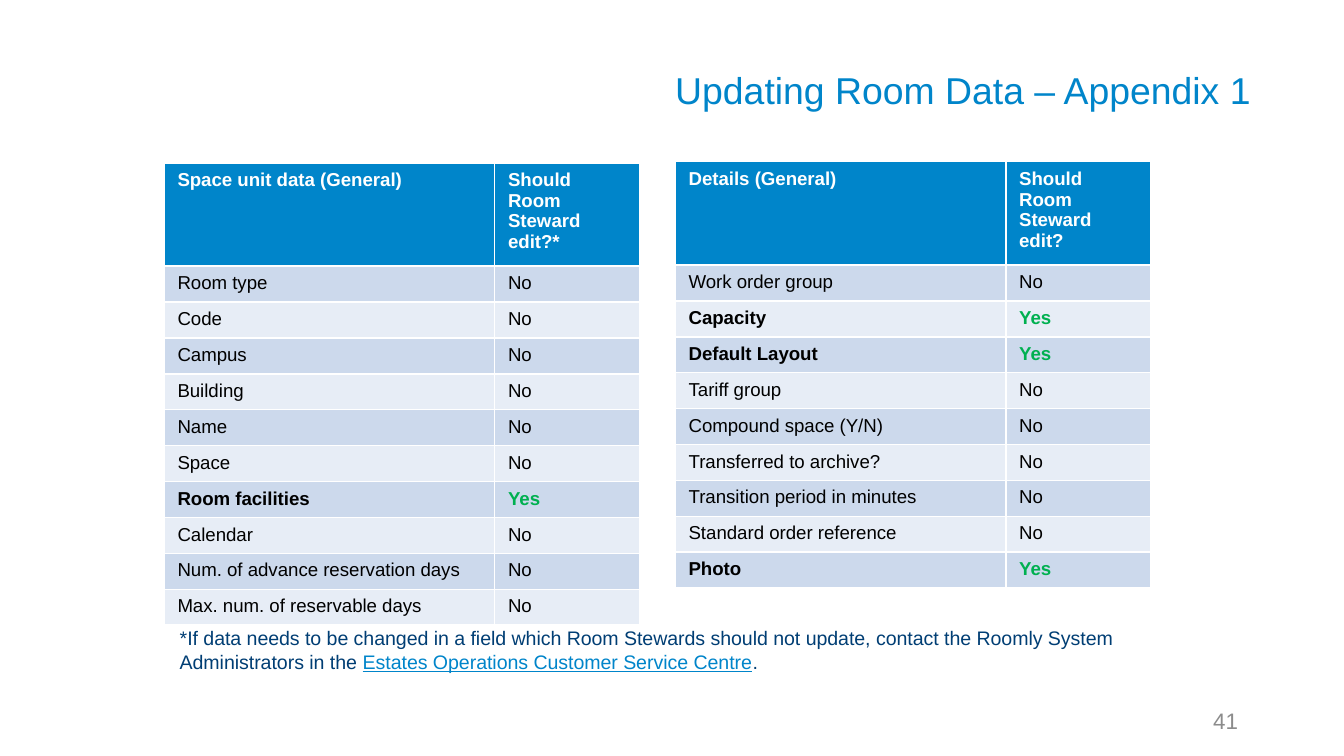
from pptx import Presentation
from pptx.dml.color import RGBColor
from pptx.enum.text import MSO_ANCHOR, PP_ALIGN
from pptx.util import Pt

TITLE = "Updating Room Data – Appendix 1"
PAGE = "41"
SPACE_UNIT = [
    ("Space unit data (General)", "Should Room Steward edit?*"),
    ("Room type", "No"),
    ("Code", "No"),
    ("Campus", "No"),
    ("Building", "No"),
    ("Name", "No"),
    ("Space", "No"),
    ("Room facilities", "Yes"),
    ("Calendar", "No"),
    ("Num. of advance reservation days", "No"),
    ("Max. num. of reservable days", "No"),
]
DETAILS = [
    ("Details (General)", "Should Room Steward edit?"),
    ("Work order group", "No"),
    ("Capacity", "Yes"),
    ("Default Layout", "Yes"),
    ("Tariff group", "No"),
    ("Compound space (Y/N)", "No"),
    ("Transferred to archive?", "No"),
    ("Transition period in minutes", "No"),
    ("Standard order reference", "No"),
    ("Photo", "Yes"),
]
NOTE = [
    ("*If data needs to be changed in a field which Room Stewards should not update, "
     "contact the Roomly System Administrators in the ", "navy", False),
    ("Estates Operations Customer Service Centre", "blue", True),
    (".", "navy", False),
]

THEME = {
    "font": "Arial",
    "blue": RGBColor(0x00, 0x85, 0xCA),
    "navy": RGBColor(0x00, 0x3E, 0x74),
    "grey": RGBColor(0x8C, 0x8C, 0x8C),
    "green": RGBColor(0x00, 0xB0, 0x50),
    "black": RGBColor(0x00, 0x00, 0x00),
    "white": RGBColor(0xFF, 0xFF, 0xFF),
    "bands": (RGBColor(0xE7, 0xED, 0xF6), RGBColor(0xCC, 0xD9, 0xEC)),
    "title": 20,
    "page": 12,
    "table": 10,
    "note": 10.5,
}
COLS = (177.1, 77.8)
HEADER_H, ROW_H = 31, 19


def style(font, size, color, bold=False):
    font.name = THEME["font"]
    font.size = Pt(size)
    font.color.rgb = THEME[color]
    font.bold = bold


def add_box(s, x, y, w, h):
    tf = s.shapes.add_textbox(Pt(x), Pt(y), Pt(w), Pt(h)).text_frame
    tf.word_wrap = True
    return tf


def add_line(s, text, kind, color, x, y, w, h):
    tf = add_box(s, x, y, w, h)
    tf.vertical_anchor = MSO_ANCHOR.MIDDLE
    p = tf.paragraphs[0]
    p.text = text
    p.alignment = PP_ALIGN.RIGHT
    style(p.font, THEME[kind], color)
    return tf


def add_field_table(s, rows, x, y):
    height = HEADER_H + ROW_H * (len(rows) - 1)
    table = s.shapes.add_table(len(rows), len(COLS), Pt(x), Pt(y),
                               Pt(sum(COLS)), Pt(height)).table
    for col, width in zip(table.columns, COLS):
        col.width = Pt(width)
    for i, row in enumerate(rows):
        header = i == 0
        editable = row[1] == "Yes"
        table.rows[i].height = Pt(HEADER_H if header else ROW_H)
        for j, text in enumerate(row):
            cell = table.cell(i, j)
            cell.fill.solid()
            cell.fill.fore_color.rgb = THEME["blue"] if header else THEME["bands"][i % 2]
            p = cell.text_frame.paragraphs[0]
            p.text = text
            color = "white" if header else "green" if editable and j == 1 else "black"
            style(p.font, THEME["table"], color, header or editable)


def add_note(s, x, y, w, h):
    p = add_box(s, x, y, w, h).paragraphs[0]
    for text, color, underline in NOTE:
        r = p.add_run()
        r.text = text
        style(r.font, THEME["note"], color)
        r.font.underline = underline


def main():
    prs = Presentation()
    prs.slide_width, prs.slide_height = Pt(720), Pt(405)
    s = prs.slides.add_slide(prs.slide_layouts[6])
    add_line(s, PAGE, "page", "grey", 508.3, 375.1, 162, 21.6)
    tf = add_line(s, TITLE, "title", "blue", 256.3, 31, 414, 30.2)
    tf.margin_left = tf.margin_right = tf.margin_bottom = 0
    add_field_table(s, SPACE_UNIT, 87.9, 87.2)
    add_field_table(s, DETAILS, 361.7, 86.6)
    add_note(s, 89.2, 332, 527.8, 33.8)
    prs.save("out.pptx")


if __name__ == "__main__":
    main()
